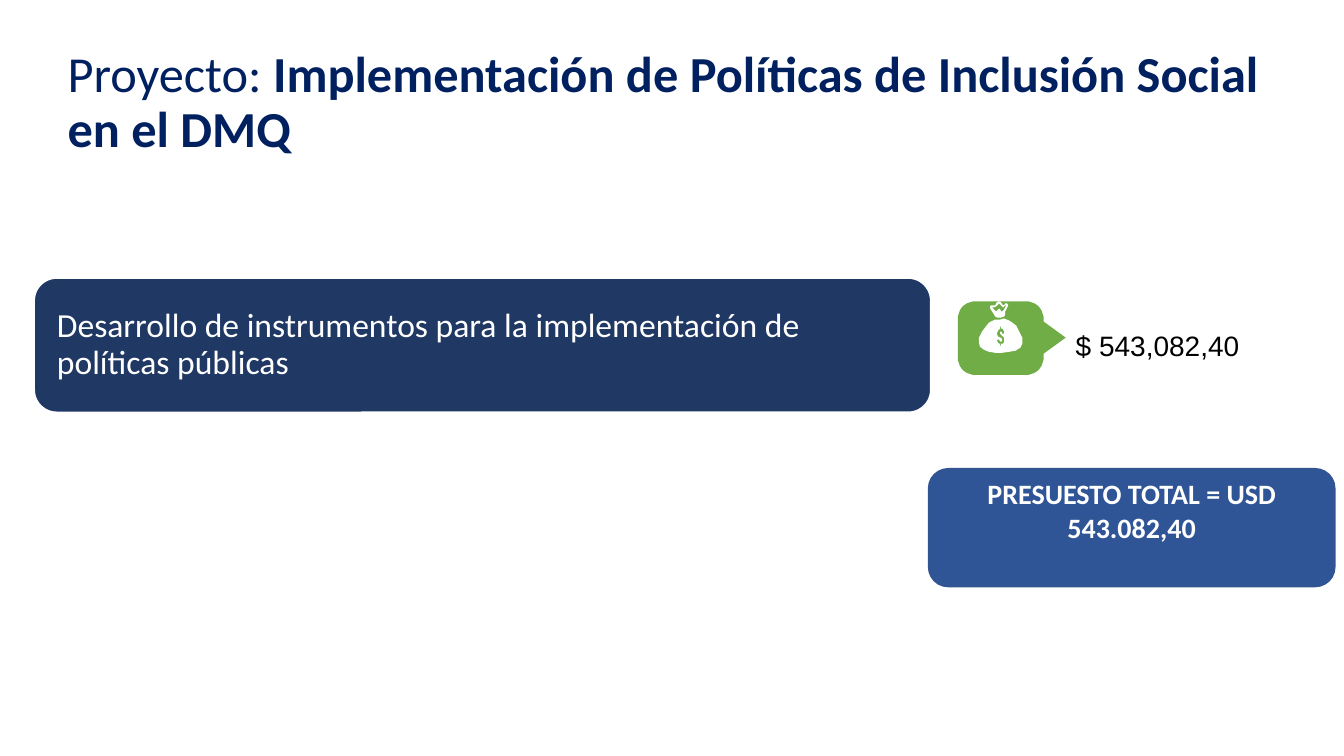
import math
import pptx
import pptx.util
import pptx.dml.color
import pptx.enum.shapes
import pptx.enum.text

Inches = pptx.util.Inches
Pt = pptx.util.Pt
Anchor = pptx.enum.text.MSO_ANCHOR
Align = pptx.enum.text.PP_ALIGN

# Outlines of the money bag, in hundredths of an inch
SACK = [(25, 17), (30, 19), (33, 21), (37, 24), (40, 30), (43, 36), (43, 42),
        (41, 46), (36, 49), (30, 50), (23, 51), (16, 51), (10, 50), (5, 48),
        (1, 45), (0, 41), (0, 36), (3, 30), (6, 26), (10, 21), (16, 18), (21, 18)]
CROWN = [(20, 0), (22, 1), (23, 3), (25, 4), (26, 2), (28, 2), (29, 4), (28, 6),
         (27, 8), (26, 10), (26, 13), (25, 15), (22, 16), (18, 16), (16, 15),
         (15, 13), (13, 10), (11, 7), (11, 5), (12, 4), (16, 4), (17, 2), (19, 0)]
BAND = [(20, 2), (19, 3), (18, 4), (17, 5), (15, 6), (13, 6), (14, 7), (16, 9),
        (17, 10), (18, 9), (19, 8), (20, 7), (21, 8), (22, 10), (23, 10), (24, 9),
        (25, 8), (26, 6), (27, 4), (26, 4), (25, 5), (24, 6), (23, 5), (22, 4), (21, 3)]
DOLLAR = [(21, 25), (21, 27), (19, 29), (18, 31), (18, 33), (19, 35), (21, 36),
          (22, 36), (23, 38), (23, 39), (22, 40), (21, 40), (20, 38), (18, 38),
          (18, 39), (19, 41), (20, 42), (21, 42), (21, 44), (22, 44), (22, 42),
          (24, 42), (25, 40), (25, 36), (24, 35), (23, 34), (22, 33), (21, 32),
          (21, 30), (22, 30), (23, 31), (23, 32), (25, 32), (25, 30), (24, 28),
          (23, 27), (22, 27), (22, 25)]


def color(code):
    return pptx.dml.color.RGBColor.from_string(code)


def assign(item, values):
    for name, value in values.items():
        setattr(item, name, value)


def write(frame, runs, hue, para=None, **values):
    """Fill the frame with one paragraph; runs holds (text, font values) pairs."""
    assign(frame, {"word_wrap": True, "auto_size": pptx.enum.text.MSO_AUTO_SIZE.NONE,
                   **values})
    line = frame.paragraphs[0]
    assign(line, {"alignment": Align.LEFT, "space_before": Pt(0), **(para or {})})
    for text, font in runs:
        run = line.add_run()
        run.text = text
        assign(run.font, {"name": "Calibri", **font})
        run.font.color.rgb = color(hue)


def paint(shape, fill, edge=None):
    shape.shadow.inherit = False
    shape.fill.solid()
    shape.fill.fore_color.rgb = color(fill)
    if edge:
        shape.line.color.rgb = color(edge)
        shape.line.width = Pt(1)
    else:
        shape.line.fill.background()


def panel(slide, box, fill, edge):
    kind = pptx.enum.shapes.MSO_SHAPE.ROUNDED_RECTANGLE
    shape = slide.shapes.add_shape(kind, *map(Inches, box))
    paint(shape, fill, edge)
    return shape.text_frame


def outline(slide, left, top, rings, fill):
    """Draw closed rings given in hundredths of an inch from left, top."""
    first, *rest = rings
    form = slide.shapes.build_freeform(*first[0], scale=float(Inches(0.01)))
    form.add_line_segments(first[1:])
    for ring in rest:
        form.move_to(*ring[0])
        form.add_line_segments(ring[1:])
    paint(form.convert_to_shape(Inches(left), Inches(top)), fill)


def tag_ring(wide, high, curve, tip):
    """Return a rounded box with a pointer on its right side."""
    middle = high / 2
    points = [(wide, middle - 16), (wide + tip, middle), (wide, middle + 16)]
    centers = [(wide - curve, high - curve), (curve, high - curve),
               (curve, curve), (wide - curve, curve)]
    for corner, (x, y) in enumerate(centers):
        for step in range(10):
            turn = math.radians(90 * corner + 10 * step)
            points.append((x + curve * math.cos(turn), y + curve * math.sin(turn)))
    return points


def title(slide, box):
    shape = slide.shapes.title
    assign(shape, dict(zip(("left", "top", "width", "height"), map(Inches, box))))
    write(shape.text_frame,
          [("Proyecto: ", {"size": Pt(36), "bold": False}),
           ("Implementación de Políticas de Inclusión Social en el DMQ",
            {"size": Pt(36), "bold": True})],
          "002060", {"line_spacing": 0.9}, vertical_anchor=Anchor.TOP)


def task(slide, box):
    write(panel(slide, box, "203864", "FFFFFF"),
          [("Desarrollo de instrumentos para la implementación de políticas públicas",
            {"size": Pt(24)})],
          "FFFFFF", {"line_spacing": 0.9}, vertical_anchor=Anchor.MIDDLE,
          margin_left=Inches(0.16), margin_right=Inches(0.16))


def amount(slide, box):
    left, top, width, height = box
    outline(slide, left, top, [tag_ring(85, 73, 18, 22)], "70AD47")
    outline(slide, left + 0.21, top, [SACK, DOLLAR, CROWN, BAND], "FFFFFF")
    label = slide.shapes.add_textbox(Inches(left + 1.07), Inches(top + 0.22),
                                     Inches(width - 1.07), Inches(height - 0.29))
    write(label.text_frame, [("$ 543,082,40", {"name": "Arial", "size": Pt(20)})],
          "000000")


def total(slide, box):
    write(panel(slide, box, "2F5597", "325491"),
          [("PRESUESTO TOTAL = USD 543.082,40", {"size": Pt(20), "bold": True})],
          "FFFFFF", {"alignment": Align.CENTER}, vertical_anchor=Anchor.MIDDLE,
          margin_bottom=Inches(0.39))


def main():
    deck = pptx.Presentation()
    deck.slide_width, deck.slide_height = Inches(13.33), Inches(7.5)
    slide = deck.slides.add_slide(deck.slide_layouts[5])
    title(slide, (0.57, 0.44, 12.52, 0.81))
    task(slide, (0.34, 2.76, 8.89, 1.33))
    amount(slide, (9.5, 2.99, 3.18, 0.73))
    total(slide, (9.21, 4.65, 4.03, 1.17))
    deck.save("out.pptx")


if __name__ == "__main__":
    main()
